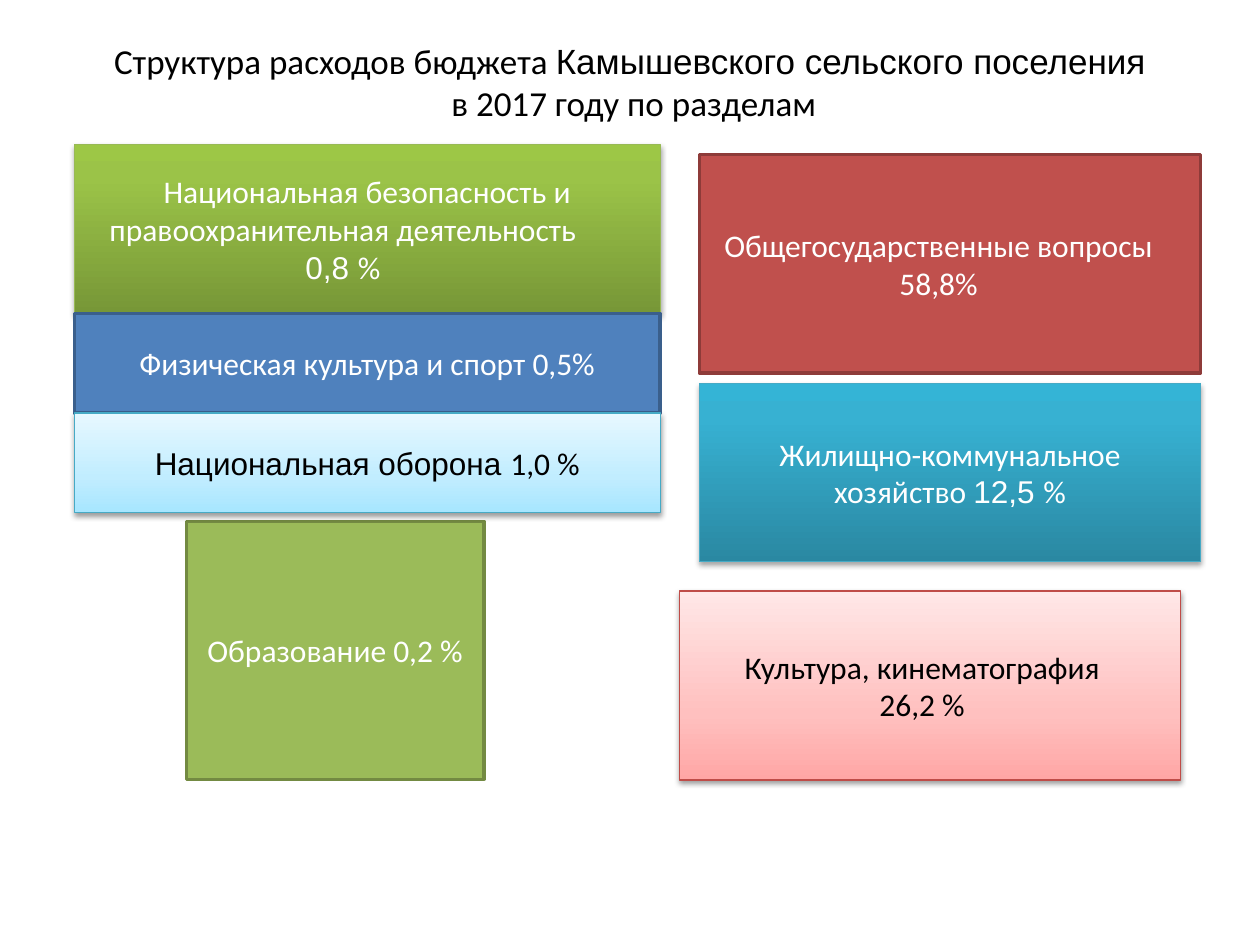
from dataclasses import dataclass

from lxml import etree
from pptx import Presentation
from pptx.dml.color import RGBColor
from pptx.enum.shapes import MSO_SHAPE
from pptx.enum.text import MSO_ANCHOR, MSO_AUTO_SIZE, PP_ALIGN
from pptx.oxml import parse_xml
from pptx.oxml.ns import nsdecls, qn
from pptx.util import Pt

RECT = MSO_SHAPE.RECTANGLE
MIDDLE = MSO_ANCHOR.MIDDLE
CENTER = PP_ALIGN.CENTER
NO_FIT = MSO_AUTO_SIZE.NONE

SANS, ARIAL = "Calibri", "Arial"
COLORS = {
    "black": "000000", "white": "FFFFFF",
    "green": "9BBB59", "green line": "738A42",
    "red": "C0504D", "red line": "8E3B39",
    "blue": "4F81BD", "blue line": "3A5F8C",
    "lime line": "98B955", "teal line": "46AAC5", "rose line": "BF4C48",
    "lime low": "779737", "lime mid": "9BC348", "lime top": "9DC746",
    "teal low": "2A88A2", "teal mid": "37B1D2", "teal top": "34B4D6",
    "rose low": "FFA6A5", "rose mid": "FFC0BF", "rose top": "FFE7E7",
    "ice low": "A7E6FF", "ice mid": "C1EDFF", "ice top": "E7F8FF",
}


@dataclass
class Word:
    text: str
    face: str = SANS


@dataclass
class Line:
    words: list[Word]
    pad: float = 0  # right indent


@dataclass
class Look:
    fill: str
    edge: str
    ink: str = "white"
    mid: int = 0  # place of the middle stop; 0 means a plain fill


@dataclass
class Box:
    left: float
    top: float
    width: float
    height: float
    look: Look
    lines: list[Line]


def color(name: str) -> RGBColor:
    return RGBColor.from_string(COLORS[name])


def write(frame, lines: list[Line], size: float, ink: str) -> None:
    frame.word_wrap = True
    frame.vertical_anchor = MIDDLE
    frame.text = "\n" * (len(lines) - 1)
    for para, line in zip(frame.paragraphs, lines):
        para.alignment = CENTER
        if line.pad:
            para._p.get_or_add_pPr().set("marR", str(Pt(line.pad)))
        for word in line.words:
            if word.text == "\v":
                para.add_line_break()
                continue
            run = para.add_run()
            run.text = word.text
            run.font.name = word.face
            run.font.size = Pt(size)
            run.font.color.rgb = color(ink)


def shade(shape, look: Look) -> None:
    """Fill upwards with three stops and cast a soft shadow below."""
    props = shape._element.spPr
    stops = zip((0, look.mid, 100), ("low", "mid", "top"))
    marks = "".join(
        f'<a:gs pos="{place * 1000}"><a:srgbClr val="{COLORS[look.fill + " " + tone]}"/></a:gs>'
        for place, tone in stops)
    fill = parse_xml(
        f'<a:gradFill {nsdecls("a")} rotWithShape="1"><a:gsLst>{marks}</a:gsLst>'
        '<a:lin ang="16200000" scaled="0"/></a:gradFill>')
    props.find(qn("a:prstGeom")).addnext(fill)
    dark, drop = (35, 1.8) if look.mid == 80 else (38, 1.6)
    cast = etree.SubElement(
        props.find(qn("a:effectLst")), qn("a:outerShdw"), blurRad=str(Pt(3.1)),
        dist=str(Pt(drop)), dir="5400000", rotWithShape="0")
    tint = etree.SubElement(cast, qn("a:srgbClr"), val=COLORS["black"])
    etree.SubElement(tint, qn("a:alpha"), val=str(dark * 1000))


def draw(slide, box: Box) -> None:
    look = box.look
    shape = slide.shapes.add_shape(
        RECT, Pt(box.left), Pt(box.top), Pt(box.width), Pt(box.height))
    shape.shadow.inherit = False
    shape.line.color.rgb = color(look.edge)
    shape.line.width = Pt(0.75 if look.mid else 2)
    if look.mid:
        shade(shape, look)
    else:
        shape.fill.solid()
        shape.fill.fore_color.rgb = color(look.fill)
    write(shape.text_frame, box.lines, 18, look.ink)


GREEN = Look("green", "green line")
RED = Look("red", "red line")
BLUE = Look("blue", "blue line")
LIME = Look("lime", "lime line", mid=80)
TEAL = Look("teal", "teal line", mid=80)
ROSE = Look("rose", "rose line", "black", 35)
ICE = Look("ice", "teal line", "black", 35)

# Stacked bars on the left share one edge and width
LEFT, WIDE, BAR = 42.5, 334.8, 56.8
STACK = 179.2
RIGHT, SIDE = 399.6, 286.5

HEAD = [Line([
    Word("Структура расходов бюджета "),
    Word("Камышевского сельского поселения", ARIAL),
    Word("\v"),
    Word(" в 2017 году по разделам"),
])]
BOXES = [
    Box(106.5, 297.9, 170, 147.5, GREEN, [Line([Word("Образование 0,2 %")])]),
    Box(LEFT, 82.6, WIDE, STACK - 82.6, LIME, [
        Line([Word("Национальная безопасность и")]),
        Line([Word("правоохранительная деятельность")], 28),
        Line([Word("0,8 ", ARIAL), Word("%")])]),
    Box(RIGHT, 88.4, SIDE, 124.8, RED, [
        Line([Word("Общегосударственные вопросы")], 13),
        Line([Word("58,8%")])]),
    Box(RIGHT, 219, SIDE, 102, TEAL, [
        Line([Word("Жилищно-коммунальное хозяйство "),
              Word("12,5 ", ARIAL), Word("%")])]),
    Box(388.2, 337.7, SIDE, 108, ROSE, [
        Line([Word("Культура, кинематография")], 9),
        Line([Word("26,2 %")])]),
    Box(LEFT, STACK, WIDE, BAR, BLUE, [
        Line([Word("Физическая культура и спорт 0,5%")])]),
    Box(LEFT, STACK + BAR, WIDE, BAR, ICE, [
        Line([Word("Национальная оборона ", ARIAL), Word("1,0 %")])]),
]


def main() -> None:
    deck = Presentation()
    deck.slide_width, deck.slide_height = Pt(720), Pt(540)
    slide = deck.slides.add_slide(deck.slide_layouts[5])
    title = slide.shapes.title
    title.left, title.top = Pt(36), Pt(21.6)
    title.width, title.height = Pt(648), Pt(49.7)
    title.text_frame.auto_size = NO_FIT
    write(title.text_frame, HEAD, 20, "black")
    for box in BOXES:
        draw(slide, box)
    deck.save("out.pptx")


if __name__ == "__main__":
    main()
